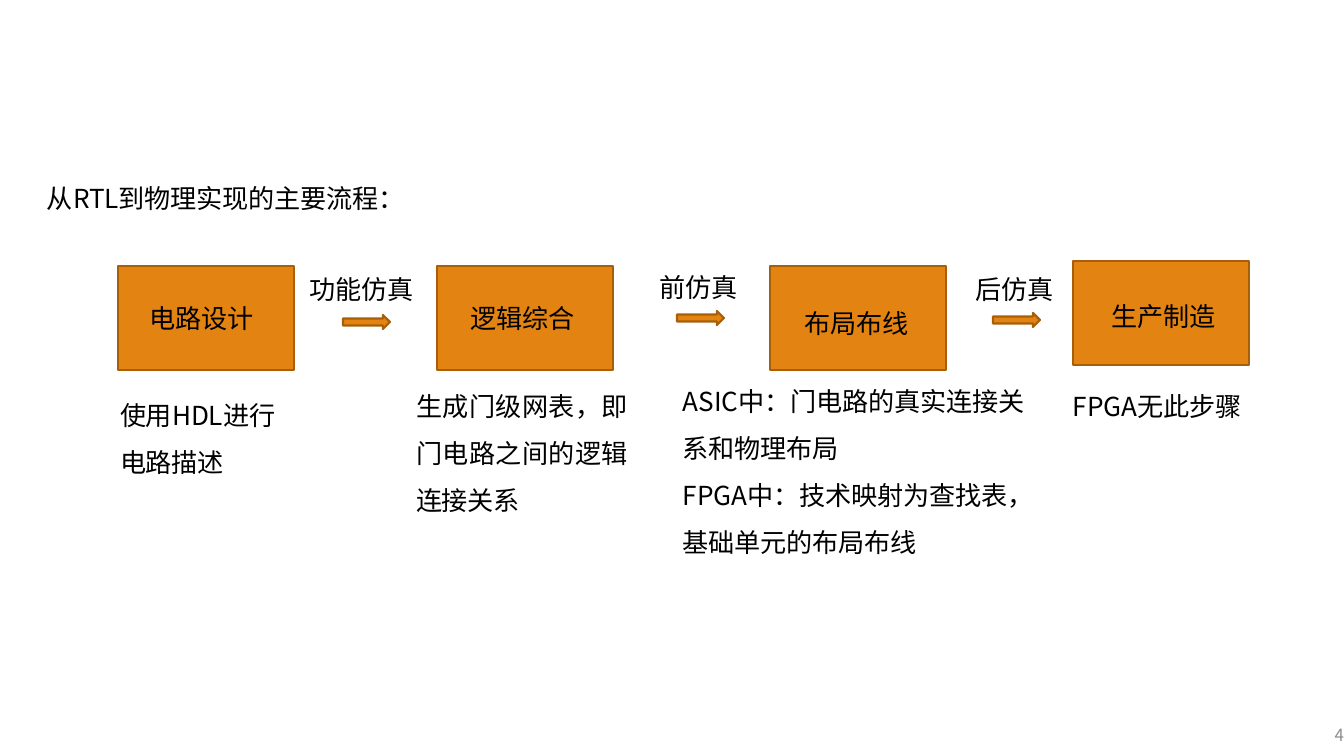
"""Build the slide on the main flow from RTL to physical implementation."""
import pptx
import pptx.dml.color
import pptx.enum.shapes
import pptx.enum.text
import pptx.oxml.ns
import pptx.util
from lxml import etree

PX = 914400 / 134.4
FONT = "Noto Sans CJK SC"
ORANGE = pptx.dml.color.RGBColor(0xE3, 0x83, 0x12)
BROWN = pptx.dml.color.RGBColor(0xA7, 0x5F, 0x09)
BLACK = pptx.dml.color.RGBColor(0x00, 0x00, 0x00)
GRAY = pptx.dml.color.RGBColor(0x8C, 0x8C, 0x8C)

LEFT = pptx.enum.text.PP_ALIGN.LEFT
RIGHT = pptx.enum.text.PP_ALIGN.RIGHT
JUSTIFY = pptx.enum.text.PP_ALIGN.JUSTIFY
TOP = pptx.enum.text.MSO_ANCHOR.TOP
MIDDLE = pptx.enum.text.MSO_ANCHOR.MIDDLE

STAGE_WIDTH, STAGE_HEIGHT = 176, 104
STAGES = [
    ("电路设计", 118, 266, 32, 0),
    ("逻辑综合", 437, 266, 34, 0),
    ("布局布线", 770, 266, 35, 5),
    ("生产制造", 1073, 261, 39, 3),
]
SIMULATIONS = [
    ("功能仿真", 309, 273, 109, 343, 315),
    ("前仿真", 659, 271, 82, 677, 311),
    ("后仿真", 975, 273, 82, 993, 313),
]
NOTES = [
    ("使用HDL进行电路描述", 120, 384, 163, 98, 1.5, LEFT),
    ("生成门级网表，即门电路之间的逻辑连接关系", 416, 375, 212, 145, 1.5, JUSTIFY),
    ("ASIC中：门电路的真实连接关系和物理布局\n"
     "FPGA中：技术映射为查找表，基础单元的布局布线", 683, 370, 360, 192, 1.5, LEFT),
    ("FPGA无此步骤", 1073, 390, 176, 66, 1, LEFT),
]


def px(length):
    """Turn pixels into EMU."""
    return pptx.util.Emu(round(length * PX))


def write(frame, text, size=14, color=BLACK, align=LEFT, anchor=TOP,
          spacing=1, inset=0, drop=0):
    """Fill a text frame with formatted paragraphs."""
    frame.word_wrap = True
    frame.vertical_anchor = anchor
    frame.margin_left, frame.margin_top = px(inset), px(2 * drop)
    frame.margin_right = frame.margin_bottom = 0
    frame.text = text
    for paragraph in frame.paragraphs:
        paragraph.alignment = align
        paragraph.line_spacing = spacing
        for run in paragraph.runs:
            run.font.size = pptx.util.Pt(size)
            run.font.name = FONT
            run.font.color.rgb = color
            properties = run._r.get_or_add_rPr()
            properties.set("spc", "-10")
            latin = properties.find(pptx.oxml.ns.qn("a:latin"))
            east_asian = etree.Element(pptx.oxml.ns.qn("a:ea"), typeface=FONT)
            latin.addnext(east_asian)


def add_text(slide, text, left, top, width, height, **style):
    """Add a plain text box."""
    box = slide.shapes.add_textbox(px(left), px(top), px(width), px(height))
    write(box.text_frame, text, **style)


def add_block(slide, preset, left, top, width, height):
    """Add an orange preset shape with a brown outline."""
    block = slide.shapes.add_shape(preset, px(left), px(top), px(width), px(height))
    block.shadow.inherit = False
    block.fill.solid()
    block.fill.fore_color.rgb = ORANGE
    block.line.color.rgb = BROWN
    block.line.width = pptx.util.Pt(1.2)
    return block


def add_stage(slide, name, left, top, inset, drop):
    """Add one labelled stage of the flow."""
    stage = add_block(slide, pptx.enum.shapes.MSO_SHAPE.RECTANGLE,
                      left, top, STAGE_WIDTH, STAGE_HEIGHT)
    write(stage.text_frame, name, anchor=MIDDLE, inset=inset, drop=drop)


def add_simulation(slide, name, left, top, width, arrow_left, arrow_top):
    """Add a simulation label above its arrow."""
    add_text(slide, name, left, top, width, 35, inset=1)
    add_block(slide, pptx.enum.shapes.MSO_SHAPE.RIGHT_ARROW,
              arrow_left, arrow_top, 47, 14)


def main():
    """Build and save the slide."""
    deck = pptx.Presentation()
    deck.slide_width, deck.slide_height = px(1344), px(756)
    slide = deck.slides.add_slide(deck.slide_layouts[6])
    add_text(slide, "从RTL到物理实现的主要流程：", 46, 181, 362, 35,
             anchor=MIDDLE, inset=1)
    for stage in STAGES:
        add_stage(slide, *stage)
    for simulation in SIMULATIONS:
        add_simulation(slide, *simulation)
    for text, left, top, width, height, spacing, align in NOTES:
        add_text(slide, text, left, top, width, height,
                 spacing=spacing, align=align)
    add_text(slide, "4", 1314, 723, 30, 24, size=9, color=GRAY,
             align=RIGHT, anchor=MIDDLE)
    deck.save("out.pptx")


if __name__ == "__main__":
    main()
